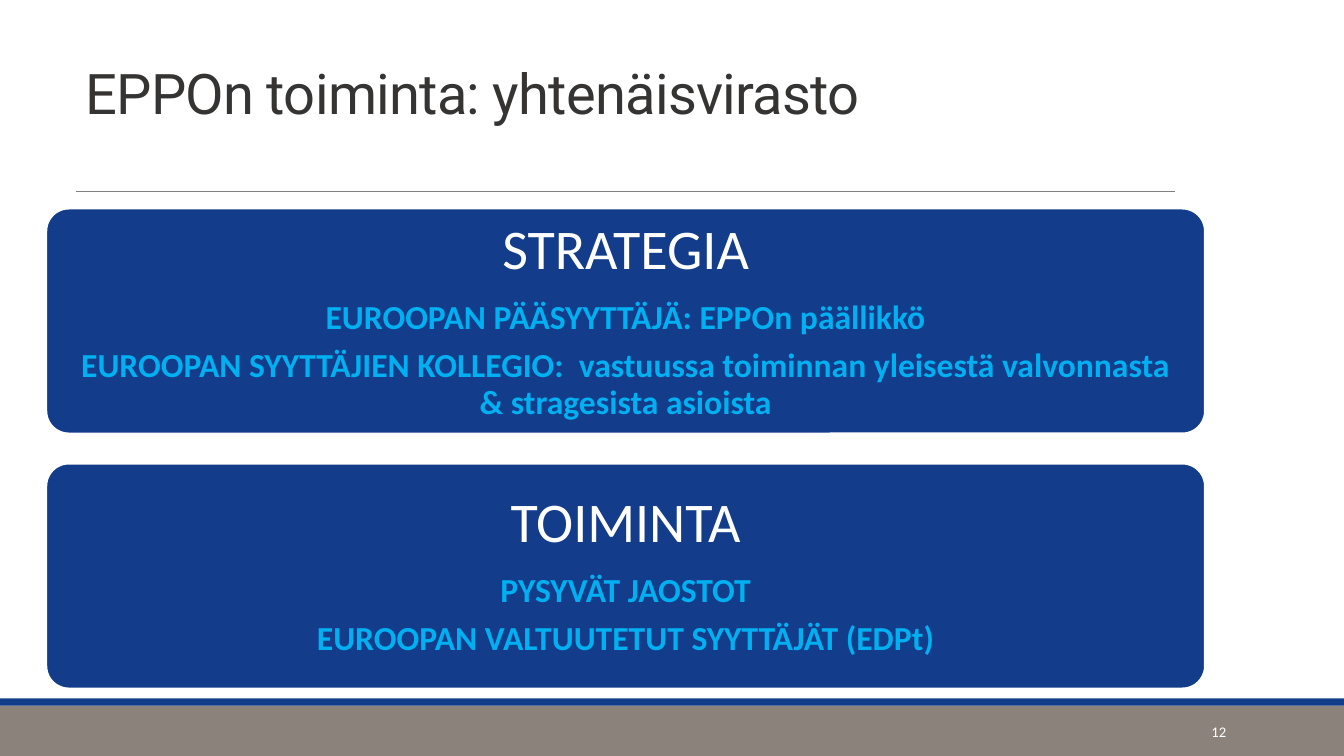
from lxml import etree
from pptx import Presentation
from pptx.dml.color import RGBColor
from pptx.enum.shapes import MSO_CONNECTOR, MSO_SHAPE
from pptx.enum.text import MSO_ANCHOR, PP_ALIGN
from pptx.oxml.ns import qn
from pptx.util import Inches, Pt

COLORS = {
    "blue": "133C8B",
    "footer": "8B827B",
    "rule": "808080",
    "title": "353433",
    "accent": "00B0F0",
    "white": "FFFFFF",
}


def rgb(name):
    return RGBColor.from_string(COLORS[name])


def write(paragraph, text, size, color, font="Calibri", bold=False,
          align=PP_ALIGN.LEFT, line=1.0, after=0, tracking=0):
    paragraph.alignment = align
    paragraph.line_spacing = line
    paragraph.space_after = Pt(after)
    run = paragraph.add_run()
    run.text = text
    run.font.name = font
    run.font.size = Pt(size)
    run.font.bold = bold
    run.font.color.rgb = rgb(color)
    if tracking:
        run.font._element.set("spc", str(int(tracking * 100)))


prs = Presentation()
prs.slide_width = Inches(13.33)
prs.slide_height = Inches(7.5)
slide = prs.slides.add_slide(prs.slide_layouts[6])

# Footer bands
for top, height, color in [(7, 0.5, "footer"), (6.93, 0.07, "blue")]:
    band = slide.shapes.add_shape(
        MSO_SHAPE.RECTANGLE, 0, Inches(top), prs.slide_width, Inches(height))
    band.shadow.inherit = False
    band.fill.solid()
    band.fill.fore_color.rgb = rgb(color)
    band.line.fill.background()

# Rule under the title
rule = slide.shapes.add_connector(
    MSO_CONNECTOR.STRAIGHT, Inches(0.75), Inches(1.9), Inches(11.65), Inches(1.9))
rule.line.color.rgb = rgb("rule")
rule.line.width = Pt(0.5)
etree.SubElement(rule._element.spPr, qn("a:effectLst"))

# Title, raised above the rule by its bottom margin
title = slide.shapes.add_textbox(
    Inches(0.75), Inches(0.26), Inches(10.9), Inches(1.59)).text_frame
title.word_wrap = True
title.vertical_anchor = MSO_ANCHOR.BOTTOM
title.margin_bottom = Inches(0.6)
write(title.paragraphs[0], "EPPOn toiminta: yhtenäisvirasto", size=40,
      color="title", font="Roboto", line=0.85, tracking=-0.5)

# Level panels
levels = [
    ("STRATEGIA", [
        "EUROOPAN PÄÄSYYTTÄJÄ: EPPOn päällikkö",
        "EUROOPAN SYYTTÄJIEN KOLLEGIO:  vastuussa toiminnan yleisestä "
        "valvonnasta & stragesista asioista"]),
    ("TOIMINTA", [
        "PYSYVÄT JAOSTOT",
        "EUROOPAN VALTUUTETUT SYYTTÄJÄT (EDPt)"]),
]
for i, (heading, bodies) in enumerate(levels):
    panel = slide.shapes.add_shape(
        MSO_SHAPE.ROUNDED_RECTANGLE,
        Inches(0.46), Inches(2.07 + 2.53 * i), Inches(11.49), Inches(2.23))
    panel.adjustments[0] = 0.1
    panel.shadow.inherit = False
    panel.fill.solid()
    panel.fill.fore_color.rgb = rgb("blue")
    panel.line.color.rgb = rgb("white")
    panel.line.width = Pt(1.25)
    content = panel.text_frame
    content.word_wrap = True
    content.vertical_anchor = MSO_ANCHOR.MIDDLE
    content.margin_left = content.margin_right = Inches(0.17)
    content.margin_top = content.margin_bottom = Inches(0.17)
    write(content.paragraphs[0], heading, size=40, color="white",
          align=PP_ALIGN.CENTER, line=0.9, after=14)
    for body in bodies:
        write(content.add_paragraph(), body, size=24, color="accent", bold=True,
              align=PP_ALIGN.CENTER, line=0.9, after=8.4)

# Slide number
number = slide.shapes.add_textbox(
    Inches(10.83), Inches(7.06), Inches(1.43), Inches(0.4)).text_frame
number.word_wrap = True
number.vertical_anchor = MSO_ANCHOR.MIDDLE
write(number.paragraphs[0], "12", size=10.5, color="white", align=PP_ALIGN.RIGHT)

prs.save("out.pptx")
